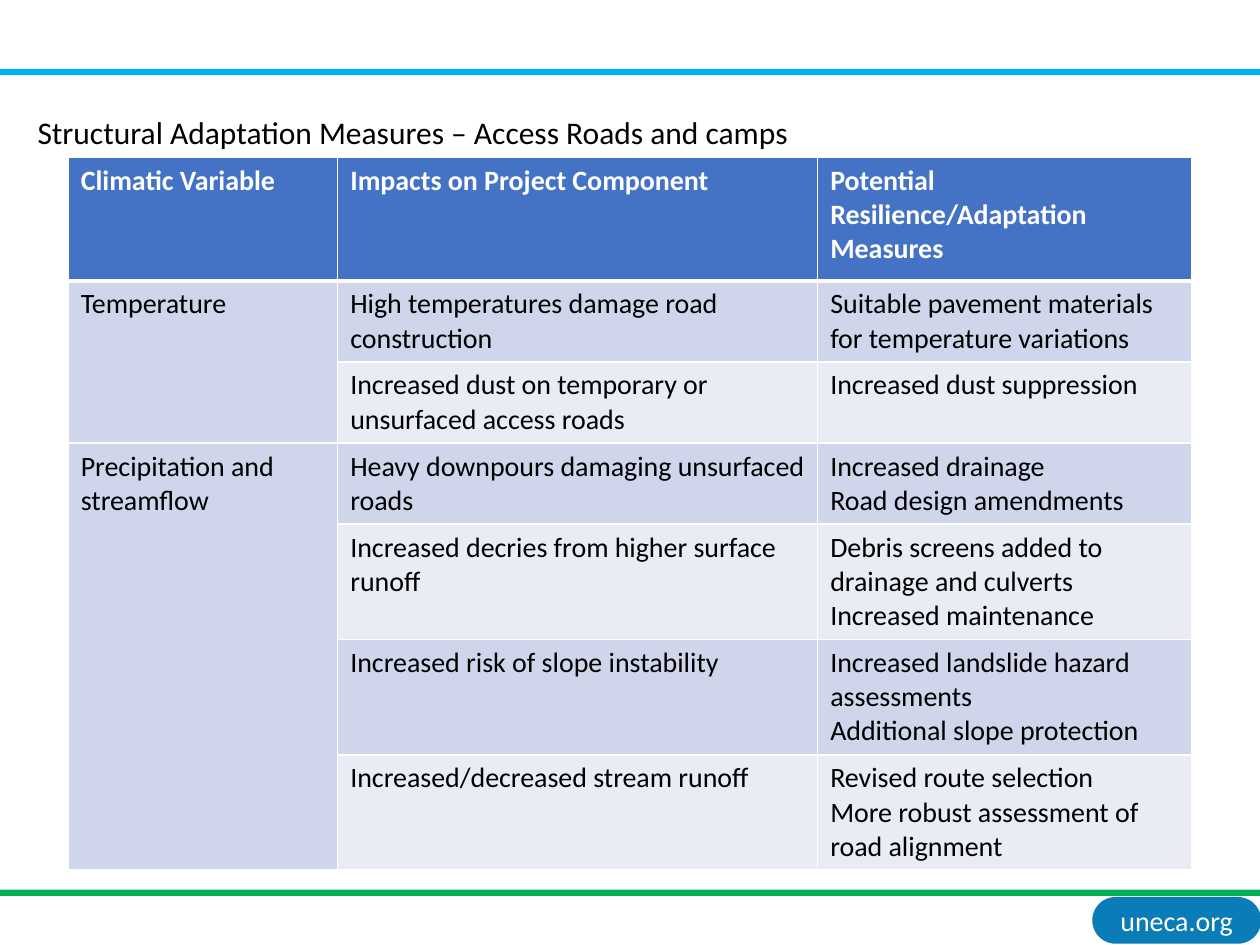
from pptx import Presentation
from pptx.dml.color import RGBColor
from pptx.enum.shapes import MSO_SHAPE as Shape
from pptx.enum.text import MSO_ANCHOR as Anchor, MSO_AUTO_SIZE as AutoSize, PP_ALIGN as Align
from pptx.oxml import parse_xml
from pptx.oxml.ns import nsdecls
from pptx.util import Pt

HEADER = ["Climatic Variable", "Impacts on Project Component",
          "Potential Resilience/Adaptation Measures"]
MEASURES = {
    "Temperature": [
        ("High temperatures damage road construction",
         "Suitable pavement materials for temperature variations"),
        ("Increased dust on temporary or unsurfaced access roads",
         "Increased dust suppression"),
    ],
    "Precipitation and streamflow": [
        ("Heavy downpours damaging unsurfaced roads",
         "Increased drainage\nRoad design amendments"),
        ("Increased decries from higher surface runoff",
         "Debris screens added to drainage and culverts\nIncreased maintenance"),
        ("Increased risk of slope instability",
         "Increased landslide hazard assessments\nAdditional slope protection"),
        ("Increased/decreased stream runoff",
         "Revised route selection\nMore robust assessment of road alignment"),
    ],
}
COLUMN_WIDTHS = [154, 274.3, 213.9]
ROW_HEIGHTS = [70.5] + [45.5] * 3 + [65] * 3
BLUE, BANDS = "4472C4", ("CFD5EA", "E9EBF5")
WHITE, BLACK = "FFFFFF", "000000"


def color(value):
    return RGBColor.from_string(value)


class SlideBuilder:
    """Holds the text style and the current slide, and adds elements to it."""

    def __init__(self, slide, font="Calibri", size=16):
        self.slide, self.font, self.size = slide, font, size

    def set_text(self, frame, text, ink, size=None, bold=False, align=Align.LEFT):
        frame.text = text
        for paragraph in frame.paragraphs:
            paragraph.alignment = align
            for run in paragraph.runs:
                run.font.name = self.font
                run.font.size = Pt(size or self.size)
                run.font.bold = bold
                run.font.color.rgb = color(ink)

    def block(self, kind, left, top, width, height, fill):
        block = self.slide.shapes.add_shape(kind, Pt(left), Pt(top), Pt(width), Pt(height))
        block.shadow.inherit = False
        block.fill.solid()
        block.fill.fore_color.rgb = color(fill)
        block.line.fill.background()
        return block

    def badge(self, left, top, width, height, fill, text):
        badge = self.block(Shape.ROUNDED_RECTANGLE, left, top, width, height, fill)
        badge.adjustments[0] = 0.5
        frame = badge.text_frame
        frame.margin_left = frame.margin_right = Pt(3.6)
        frame.margin_top = frame.margin_bottom = Pt(3.6)
        frame.vertical_anchor = Anchor.MIDDLE
        self.set_text(frame, text, WHITE, align=Align.CENTER)

    def title(self, left, top, width, height, text):
        frame = self.slide.shapes.add_textbox(
            Pt(left), Pt(top), Pt(width), Pt(height)).text_frame
        frame.word_wrap = False
        frame.auto_size = AutoSize.SHAPE_TO_FIT_TEXT
        self.set_text(frame, text, BLACK, size=18)

    def cell(self, cell, text, fill, ink=BLACK, bold=False, top=1, bottom=1):
        self.set_text(cell.text_frame, text, ink, bold=bold)
        cell.fill.solid()
        cell.fill.fore_color.rgb = color(fill)
        properties = cell._tc.get_or_add_tcPr()
        sides = {"L": 1, "R": 1, "T": top, "B": bottom}
        for index, (side, width) in enumerate(sides.items()):
            properties.insert(index, parse_xml(
                f'<a:ln{side} {nsdecls("a")} w="{Pt(width)}"><a:solidFill>'
                f'<a:srgbClr val="{WHITE}"/></a:solidFill></a:ln{side}>'))

    def table(self, left, top, header, groups, widths, heights):
        table = self.slide.shapes.add_table(
            len(heights), len(widths), Pt(left), Pt(top),
            Pt(sum(widths)), Pt(sum(heights))).table
        for column, width in zip(table.columns, widths):
            column.width = Pt(width)
        for row, height in zip(table.rows, heights):
            row.height = Pt(height)
        for column, text in enumerate(header):
            self.cell(table.cell(0, column), text, BLUE, WHITE, bold=True, bottom=3)
        row = 1
        for variable, measures in groups.items():
            first = row
            for impact, response in measures:
                band = BANDS[(row - 1) % 2]
                edge = 3 if row == 1 else 1
                label = variable if row == first else ""
                self.cell(table.cell(row, 0), label, BANDS[0], top=edge)
                self.cell(table.cell(row, 1), impact, band, top=edge)
                self.cell(table.cell(row, 2), response, band, top=edge)
                row += 1
            table.cell(first, 0).merge(table.cell(row - 1, 0))


def main():
    deck = Presentation()
    deck.slide_width, deck.slide_height = Pt(720), Pt(540)
    builder = SlideBuilder(deck.slides.add_slide(deck.slide_layouts[6]))
    builder.badge(624.2, 512.6, 96.5, 26.7, "0A7CB8", "uneca.org")
    builder.block(Shape.RECTANGLE, 0, 39.4, 720, 3.6, "00B0F0")
    builder.block(Shape.RECTANGLE, 0, 508.4, 720, 3.6, "00B050")
    builder.table(39, 90, HEADER, MEASURES, COLUMN_WIDTHS, ROW_HEIGHTS)
    builder.title(14.4, 61.2, 448.6, 29,
                  "Structural Adaptation Measures – Access Roads and camps")
    deck.save("out.pptx")


if __name__ == "__main__":
    main()
